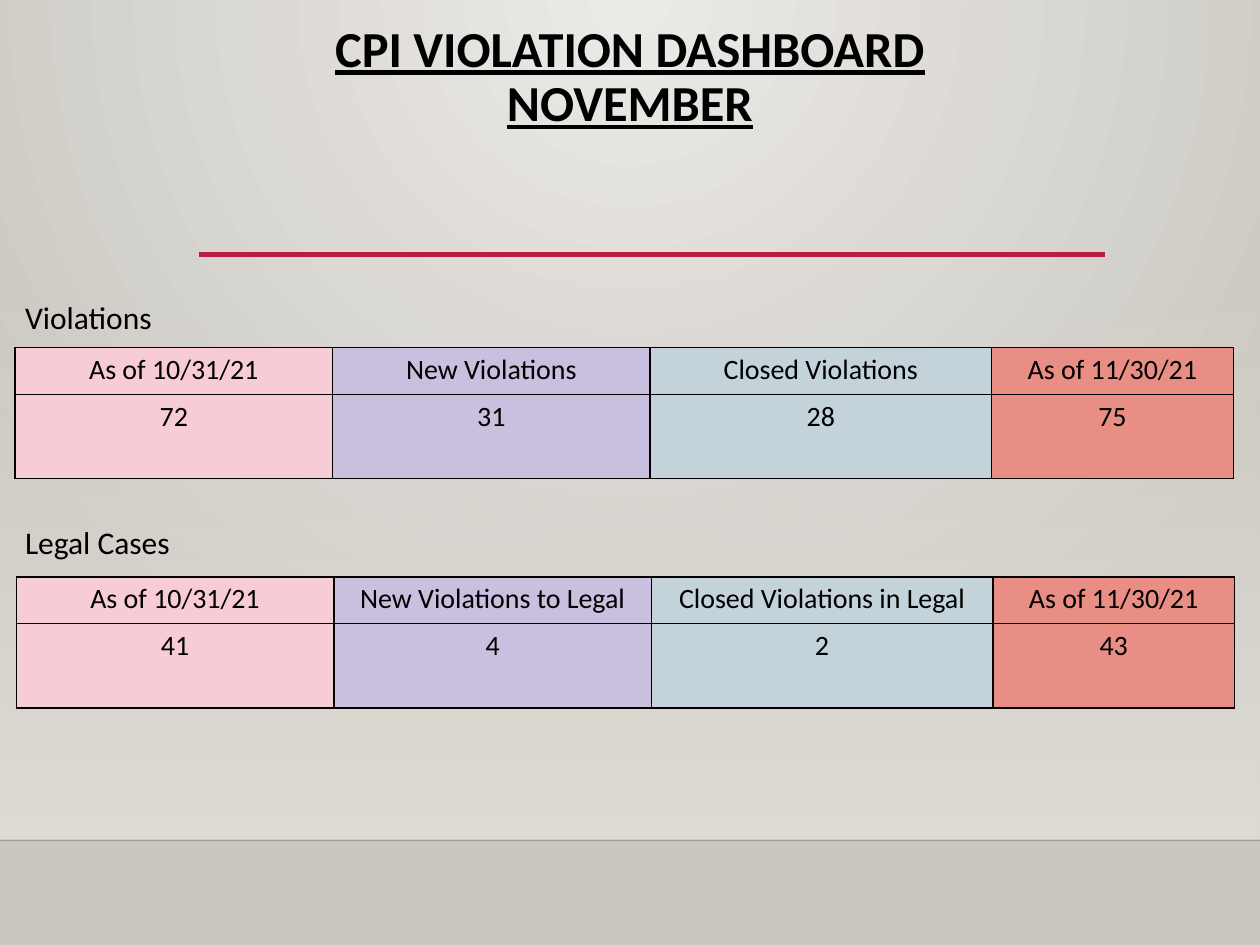
from dataclasses import dataclass

from pptx import Presentation
from pptx.dml.color import RGBColor
from pptx.enum import shapes, text
from pptx.oxml import parse_xml
from pptx.oxml.ns import nsdecls, qn
from pptx.util import Inches, Pt


@dataclass(frozen=True)
class Theme:
    font: str = "Calibri"
    ink: str = "000000"
    accent: str = "B71E42"
    floor_line: str = "000001"
    glow: str = "ECEAE7"
    backdrop: str = "CAC7C1"
    wall: str = "DFDBD5"
    columns: tuple = ("F7CCD6", "C9BFDF", "C3D3D9", "E88E84")
    title_size: float = 28.8
    caption_size: float = 18
    table_size: float = 16


THEME = Theme()
COLUMN_WIDTHS = (2.52, 2.52, 2.71, 1.92)
ROW_HEIGHTS = (0.37, 0.67)


def gradient_xml(stops, direction):
    """Return a gradient fill; stops are (position %, colour, opacity %)."""
    marks = "".join(
        f'<a:gs pos="{position * 1000}"><a:srgbClr val="{color}">'
        f'<a:alpha val="{opacity * 1000}"/></a:srgbClr></a:gs>'
        for position, color, opacity in stops)
    return (f'<a:gradFill {nsdecls("a")} rotWithShape="1">'
            f'<a:gsLst>{marks}</a:gsLst>{direction}</a:gradFill>')


def paint_background(page):
    fill = gradient_xml(
        [(0, THEME.glow, 100), (100, THEME.backdrop, 100)],
        '<a:path path="circle"><a:fillToRect l="43000" t="0" r="43000" b="100000"/></a:path>')
    page.element.cSld.insert(0, parse_xml(
        f'<p:bg {nsdecls("p", "a")}><p:bgPr>{fill}<a:effectLst/></p:bgPr></p:bg>'))


def add_wall(page):
    wall = page.shapes.add_shape(
        shapes.MSO_SHAPE.RECTANGLE, 0, Inches(2.2), Inches(10), Inches(4.46))
    wall.shadow.inherit = False
    wall.line.fill.background()
    wall.fill.background()
    properties = wall.element.spPr
    fill = gradient_xml([(0, THEME.wall, 0), (100, THEME.wall, 100)],
                        '<a:lin ang="5400000" scaled="0"/>')
    properties.replace(properties.find(qn("a:noFill")), parse_xml(fill))


def add_rule(page, left, right, top, color, width, opacity=100):
    rule = page.shapes.add_connector(
        shapes.MSO_CONNECTOR.STRAIGHT,
        Inches(left), Inches(top), Inches(right), Inches(top))
    rule.line.color.rgb = RGBColor.from_string(color)
    rule.line.width = Pt(width)
    properties = rule.element.spPr
    properties.append(parse_xml(f'<a:effectLst {nsdecls("a")}/>'))
    if opacity < 100:
        tint = next(properties.iter(qn("a:srgbClr")))
        tint.append(parse_xml(f'<a:alpha {nsdecls("a")} val="{opacity * 1000}"/>'))


def style(para, size, align=text.PP_ALIGN.CENTER):
    para.alignment = align
    para.font.name = THEME.font
    para.font.size = Pt(size)
    para.font.color.rgb = RGBColor.from_string(THEME.ink)


def set_title(page, wording):
    title = page.shapes.title
    title.left, title.top = Inches(0.69), Inches(0.14)
    title.width, title.height = Inches(8.62), Inches(0.6)
    frame = title.text_frame
    frame.auto_size = text.MSO_AUTO_SIZE.NONE
    frame.vertical_anchor = text.MSO_ANCHOR.TOP
    frame.text = wording
    para = frame.paragraphs[0]
    style(para, THEME.title_size)
    para.line_spacing = 0.9
    para.font.bold = para.font.underline = True


def add_caption(page, top, wording):
    box = page.shapes.add_textbox(Inches(0.1), Inches(top), Inches(3.59), Inches(0.4))
    frame = box.text_frame
    frame.word_wrap = True
    frame.auto_size = text.MSO_AUTO_SIZE.SHAPE_TO_FIT_TEXT
    frame.text = wording
    style(frame.paragraphs[0], THEME.caption_size, text.PP_ALIGN.LEFT)


def add_borders(cell):
    properties = cell._tc.get_or_add_tcPr()
    for side in ("lnL", "lnR", "lnT", "lnB"):
        properties.append(parse_xml(
            f'<a:{side} {nsdecls("a")} w="{Pt(1)}"><a:solidFill>'
            f'<a:srgbClr val="{THEME.ink}"/></a:solidFill></a:{side}>'))


def fill_cell(cell, wording, color):
    add_borders(cell)
    cell.fill.solid()
    cell.fill.fore_color.rgb = RGBColor.from_string(color)
    cell.margin_left = cell.margin_right = Inches(0.07)
    cell.margin_top = cell.margin_bottom = Inches(0.04)
    cell.text = wording
    style(cell.text_frame.paragraphs[0], THEME.table_size)


def add_count_table(page, left, top, rows):
    table = page.shapes.add_table(
        len(ROW_HEIGHTS), len(COLUMN_WIDTHS), Inches(left), Inches(top),
        Inches(sum(COLUMN_WIDTHS)), Inches(sum(ROW_HEIGHTS))).table
    for column, width in zip(table.columns, COLUMN_WIDTHS):
        column.width = Inches(width)
    for row, height, wordings in zip(table.rows, ROW_HEIGHTS, rows):
        row.height = Inches(height)
        for cell, wording, color in zip(row.cells, wordings, THEME.columns):
            fill_cell(cell, wording, color)


def main():
    deck = Presentation()
    deck.slide_width, deck.slide_height = Inches(10), Inches(7.5)
    page = deck.slides.add_slide(deck.slide_layouts[5])
    paint_background(page)
    add_wall(page)
    add_rule(page, 0, 10, 6.67, THEME.floor_line, 1, opacity=20)
    add_rule(page, 1.58, 8.77, 2.02, THEME.accent, 2.5)
    set_title(page, "CPI VIOLATION DASHBOARD\vNOVEMBER")

    add_caption(page, 2.32, "Violations")
    add_count_table(page, 0.12, 2.76, [
        ("As of 10/31/21", "New Violations", "Closed Violations", "As of 11/30/21"),
        ("72", "31", "28", "75")])
    add_caption(page, 4.1, "Legal Cases")
    add_count_table(page, 0.13, 4.58, [
        ("As of 10/31/21", "New Violations to Legal",
         "Closed Violations in Legal", "As of 11/30/21"),
        ("41", "4", "2", "43")])
    deck.save("out.pptx")


if __name__ == "__main__":
    main()
